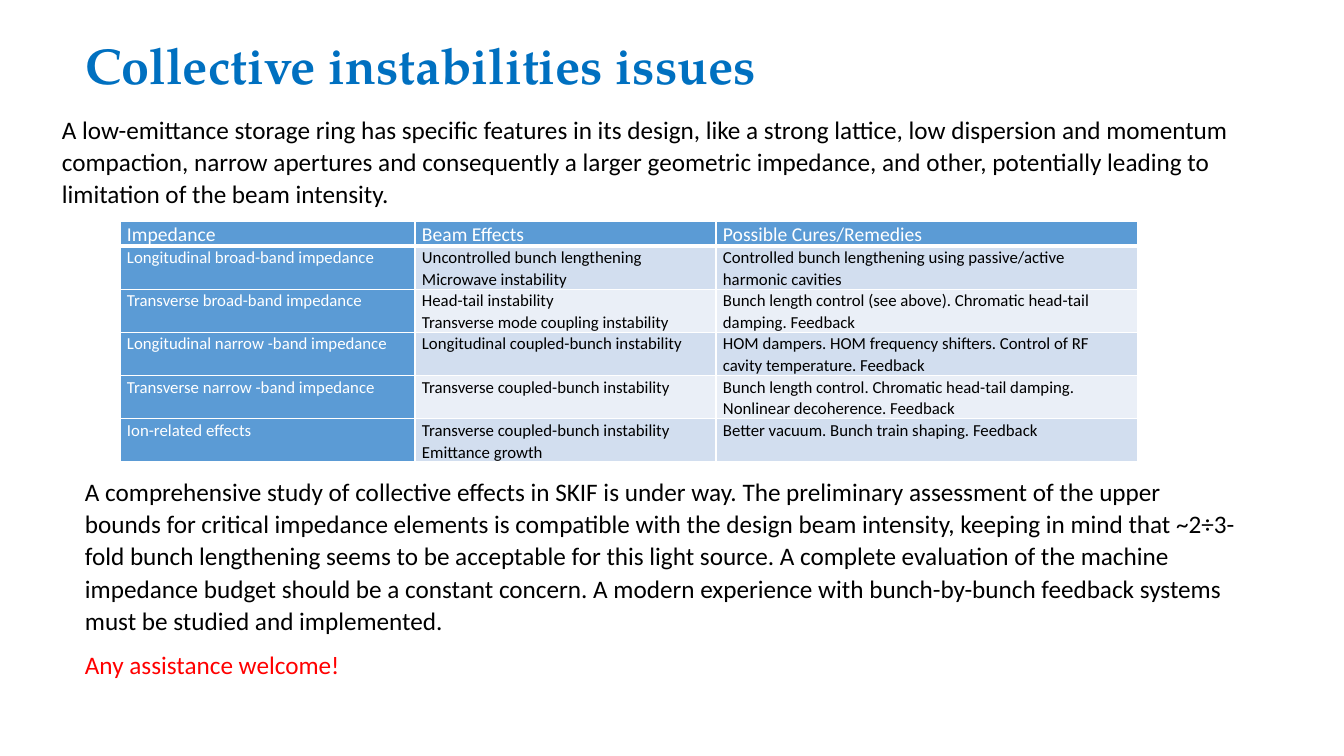
from pptx import Presentation
from pptx.dml.color import RGBColor
from pptx.enum.text import MSO_ANCHOR, MSO_AUTO_SIZE, PP_ALIGN
from pptx.oxml import parse_xml
from pptx.oxml.ns import nsdecls
from pptx.util import Emu, Pt

PX = 914400 / 100.8
WHITE, BLACK, RED = "FFFFFF", "000000", "FF0000"
TITLE_BLUE, HEAD_BLUE = "0070C0", "5B9BD5"
BANDS = ["D2DEEF", "EAEFF7"]

INTRO = (
    "A low-emittance storage ring has specific features in its design, like a strong lattice, "
    "low dispersion and momentum compaction, narrow apertures and consequently a larger "
    "geometric impedance, and other, potentially leading to limitation of the beam intensity."
)
SUMMARY = (
    "A comprehensive study of collective effects in SKIF is under way. The preliminary "
    "assessment of the upper bounds for critical impedance elements is compatible with the "
    "design beam intensity, keeping in mind that ~2÷3-fold bunch lengthening seems to be "
    "acceptable for this light source. A complete evaluation of the machine impedance budget "
    "should be a constant concern. A modern experience with bunch-by-bunch feedback systems "
    "must be studied and implemented."
)
IMPEDANCE_ROWS = [
    ["Impedance", "Beam Effects", "Possible Cures/Remedies"],
    ["Longitudinal broad-band impedance",
     "Uncontrolled bunch lengthening\nMicrowave instability",
     "Controlled bunch lengthening using passive/active harmonic cavities"],
    ["Transverse broad-band impedance",
     "Head-tail instability\nTransverse mode coupling instability",
     "Bunch length control (see above). Chromatic head-tail damping. Feedback"],
    ["Longitudinal narrow -band impedance",
     "Longitudinal coupled-bunch instability",
     "HOM dampers. HOM frequency shifters. Control of RF cavity temperature. Feedback"],
    ["Transverse narrow -band impedance",
     "Transverse coupled-bunch instability",
     "Bunch length control. Chromatic head-tail damping.\nNonlinear decoherence. Feedback"],
    ["Ion-related effects",
     "Transverse coupled-bunch instability\nEmittance growth",
     "Better vacuum. Bunch train shaping. Feedback"],
]


def px(n):
    return Emu(round(n * PX))


def rgb(color):
    return RGBColor.from_string(color)


class SlideBuilder:
    title_font = "TeX Gyre Pagella"
    body_font = "Calibri"
    line_spacing = 1.07

    def __init__(self, slide):
        self.s = slide

    def format(self, p, size, color, after=0):
        p.line_spacing = self.line_spacing
        p.space_after = Pt(after)
        p.font.name, p.font.size, p.font.bold = self.body_font, Pt(size), False
        p.font.color.rgb = rgb(color)

    def title(self, text, x, y, w, h):
        sp = self.s.shapes.title
        sp.left, sp.top, sp.width, sp.height = map(px, (x, y, w, h))
        tf = sp.text_frame
        tf.text = text
        tf.word_wrap = False
        tf.auto_size = MSO_AUTO_SIZE.NONE
        tf.vertical_anchor = MSO_ANCHOR.TOP
        p = tf.paragraphs[0]
        p.alignment = PP_ALIGN.LEFT
        p.font.name, p.font.size, p.font.bold = self.title_font, Pt(36), True
        p.font.color.rgb = rgb(TITLE_BLUE)

    def text(self, paragraphs, x, y, w, h):
        tf = self.s.shapes.add_textbox(*map(px, (x, y, w, h))).text_frame
        tf.word_wrap = True
        tf.text = "\n".join(text for text, _ in paragraphs)
        for p, (_, color) in zip(tf.paragraphs, paragraphs):
            self.format(p, 18, color, after=8)

    def borders(self, cell, bottom):
        tcPr = cell._tc.get_or_add_tcPr()
        for side in "LRTB":
            width = Pt(bottom if side == "B" else 1)
            tcPr.append(parse_xml(
                f'<a:ln{side} {nsdecls("a")} w="{width}"><a:solidFill>'
                f'<a:srgbClr val="{WHITE}"/></a:solidFill></a:ln{side}>'))

    def cell(self, cell, text, size, color, fill, after, bottom):
        self.borders(cell, bottom)
        cell.fill.solid()
        cell.fill.fore_color.rgb = rgb(fill)
        cell.margin_left = cell.margin_right = px(7)
        cell.margin_top = cell.margin_bottom = 0
        cell.text_frame.text = text
        for p in cell.text_frame.paragraphs:
            self.format(p, size, color, after)

    def table(self, rows, x, y, widths, head_h, row_h):
        h = head_h + row_h * (len(rows) - 1)
        frame = self.s.shapes.add_table(
            len(rows), len(widths), *map(px, (x, y, sum(widths), h)))
        tbl = frame.table
        tbl.first_col = True
        for column, w in zip(tbl.columns, widths):
            column.width = px(w)
        for i, row in enumerate(rows):
            head = i == 0
            tbl.rows[i].height = px(head_h if head else row_h)
            for j, text in enumerate(row):
                label = head or j == 0
                self.cell(tbl.cell(i, j), text,
                          size=14 if head else 12,
                          color=WHITE if label else BLACK,
                          fill=HEAD_BLUE if label else BANDS[(i - 1) % 2],
                          after=6 if head else 0,
                          bottom=3 if head else 1)


def main():
    prs = Presentation()
    prs.slide_width, prs.slide_height = px(1344), px(756)
    b = SlideBuilder(prs.slides.add_slide(prs.slide_layouts[5]))

    # Title and introduction
    b.title("Collective instabilities issues", 75, 29, 699, 72)
    b.text([(INTRO, BLACK)], 52, 107, 1231, 108)

    # Impedance effects and remedies
    b.table(IMPEDANCE_ROWS, 120, 221, [295, 301, 422], head_h=25, row_h=43)

    # Summary and call for help
    b.text([(SUMMARY, BLACK), ("Any assistance welcome!", RED)], 75, 469, 1177, 218)

    prs.save("out.pptx")


if __name__ == "__main__":
    main()
